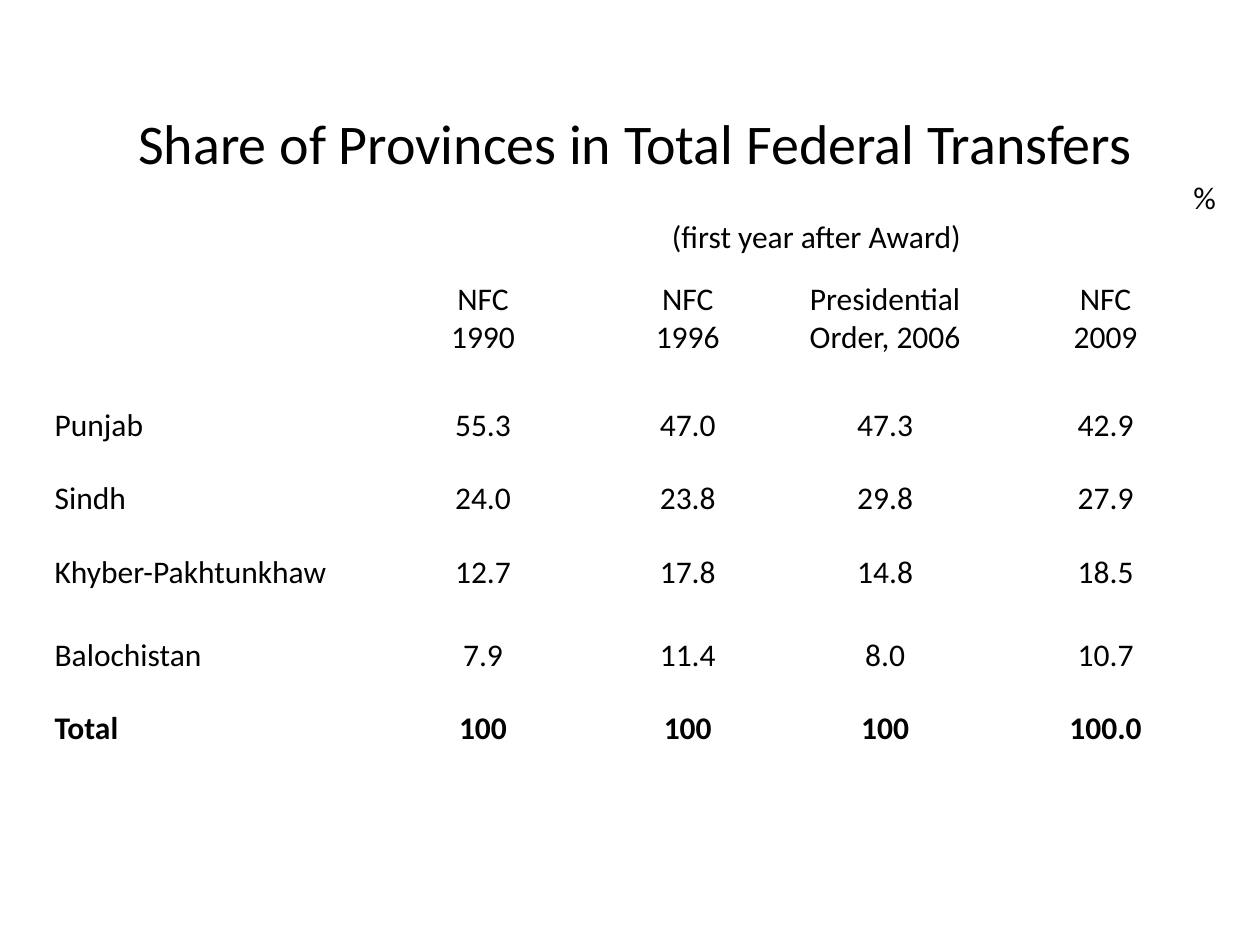
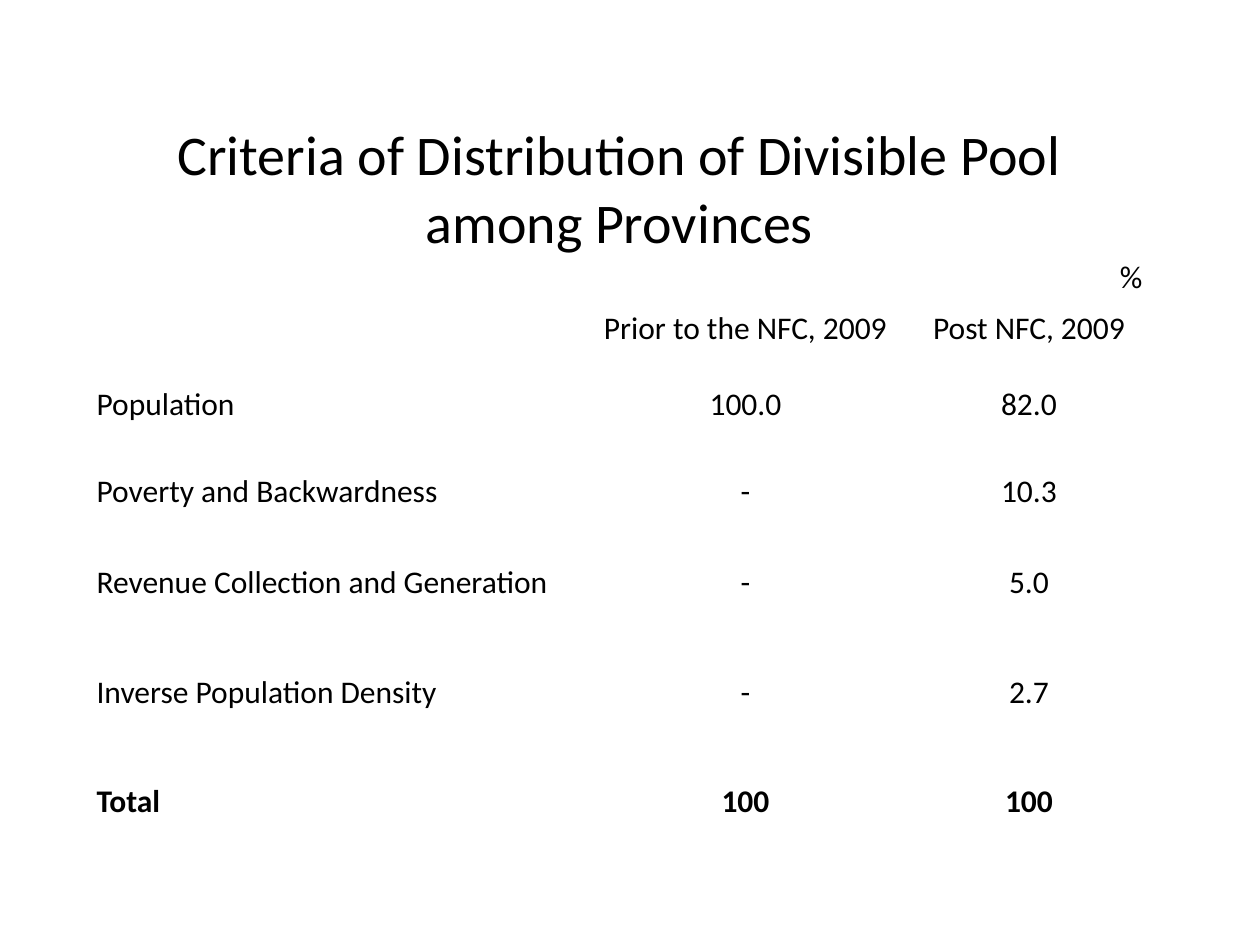
"""Builds two slides of tables on the sharing of federal revenue among provinces."""
import dataclasses

import pptx
import pptx.dml.color
import pptx.enum.text
import pptx.util

Pt = pptx.util.Pt
Align = pptx.enum.text.PP_ALIGN


@dataclasses.dataclass(frozen=True)
class Theme:
    """Colours, font and type sizes that the slides share."""
    text_color: pptx.dml.color.RGBColor = pptx.dml.color.RGBColor(0, 0, 0)
    background: pptx.dml.color.RGBColor = pptx.dml.color.RGBColor(255, 255, 255)
    font_name: str = "Calibri"
    title_size: int = 32
    text_size: int = 18


THEME = Theme()
NOTE_INDENT = 207

PROVINCE_SHARES = [
    ["", "NFC\n1990", "NFC\n1996", "Presidential Order, 2006", "NFC\n2009"],
    ["Punjab", "55.3", "47.0", "47.3", "42.9"],
    ["Sindh", "24.0", "23.8", "29.8", "27.9"],
    ["Khyber-Pakhtunkhaw", "12.7", "17.8", "14.8", "18.5"],
    ["Balochistan", "7.9", "11.4", "8.0", "10.7"],
    ["Total", "100", "100", "100", "100.0"],
]
POOL_CRITERIA = [
    ["", "Prior to the NFC, 2009", "Post NFC, 2009"],
    ["Population", "100.0", "82.0"],
    ["Poverty and Backwardness", "-", "10.3"],
    ["Revenue Collection and Generation", "-", "5.0"],
    ["Inverse Population Density", "-", "2.7"],
    ["Total", "100", "100"],
]


def format_paragraph(paragraph, alignment, size=THEME.text_size, bold=False):
    """Set the alignment and font of one paragraph."""
    paragraph.alignment = alignment
    font = paragraph.font
    font.name = THEME.font_name
    font.size = Pt(size)
    font.bold = bold
    font.color.rgb = THEME.text_color


def fill_cell(cell, text, alignment, bold=False):
    """Write the lines of a text into a cell, one paragraph a line."""
    cell.text = text
    for paragraph in cell.text_frame.paragraphs:
        format_paragraph(paragraph, alignment, bold=bold)


def fill_heading(table, title, note):
    """Merge the first row and write the title, the unit and any note."""
    heading = table.cell(0, 0)
    heading.merge(table.cell(0, len(table.columns) - 1))
    fill_cell(heading, "\n".join(filter(None, [title, "%", note])), Align.CENTER)
    paragraphs = heading.text_frame.paragraphs
    format_paragraph(paragraphs[0], Align.CENTER, THEME.title_size)
    format_paragraph(paragraphs[1], Align.RIGHT)
    if note:
        paragraphs[2]._p.get_or_add_pPr().set("marL", str(Pt(NOTE_INDENT)))


def add_plain_table(slide, left, top, widths, heights):
    """Add a table without fills, banding or header style."""
    frame = slide.shapes.add_table(
        len(heights), len(widths), Pt(left), Pt(top), Pt(sum(widths)), Pt(sum(heights)))
    table = frame.table
    table.first_row = table.horz_banding = False
    for column, width in zip(table.columns, widths):
        column.width = Pt(width)
    for row, height in zip(table.rows, heights):
        row.height = Pt(height)
    for cell in table.iter_cells():
        cell.fill.background()
    return table


def add_table_slide(presentation, title, records, left, top, widths, heights, note=""):
    """Add a slide with one titled table of percentages."""
    slide = presentation.slides.add_slide(presentation.slide_layouts[6])
    slide.background.fill.solid()
    slide.background.fill.fore_color.rgb = THEME.background
    table = add_plain_table(slide, left, top, widths, heights)
    fill_heading(table, title, note)
    for row_index, record in enumerate(records, start=1):
        for column_index, text in enumerate(record):
            alignment = Align.CENTER if column_index else Align.LEFT
            fill_cell(table.cell(row_index, column_index), text, alignment,
                      bold=record[0] == "Total")


def main():
    """Build and save the presentation."""
    presentation = pptx.Presentation()
    presentation.slide_width = Pt(720)
    presentation.slide_height = Pt(540)
    add_table_slide(
        presentation, "Share of Provinces in Total Federal Transfers", PROVINCE_SHARES,
        left=24, top=60, widths=[192, 120, 114, 111.6, 140.4],
        heights=[96.5, 72, 42, 42, 47.5, 42, 42], note="(first year after Award)")
    add_table_slide(
        presentation, "Criteria of Distribution of Divisible Pool among Provinces",
        POOL_CRITERIA, left=48, top=66, widths=[288, 180, 144],
        heights=[104.5, 43.2, 49.5, 52.5, 62.6, 62.6, 62.6])
    presentation.save("out.pptx")


if __name__ == "__main__":
    main()
